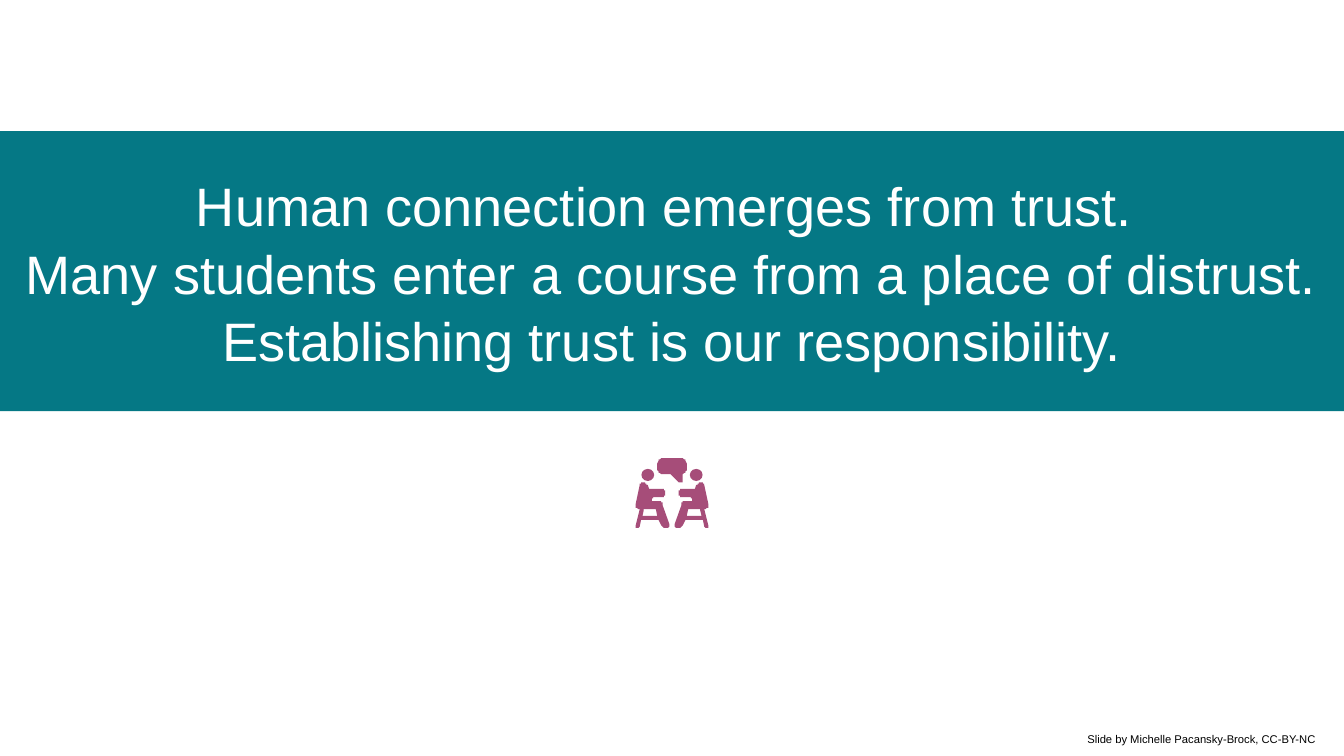
from pptx import Presentation
from pptx.dml.color import RGBColor
from pptx.enum.shapes import MSO_SHAPE
from pptx.enum.text import MSO_ANCHOR, MSO_AUTO_SIZE, PP_ALIGN
from pptx.util import Cm, Pt

OVAL = MSO_SHAPE.OVAL
CENTER, LEFT = PP_ALIGN.CENTER, PP_ALIGN.LEFT
MIDDLE, TOP = MSO_ANCHOR.MIDDLE, MSO_ANCHOR.TOP
NO_AUTOFIT = MSO_AUTO_SIZE.NONE
TITLE_ONLY = 5

COLORS = {"band": "057885", "icon": "A64D79", "on_band": "FFFFFF", "credit": "000000"}

MESSAGE = [
    "Human connection emerges from trust. ",
    "Many students enter a course from a place of distrust.",
    "Establishing trust is our responsibility.",
]

# Icon outlines: x runs from the icon's axis, y from its top, in icon units.
# Two numbers are a line's end; six are a curve's two controls and end.
ICON_UNIT = Cm(0.0254)
ICON_AXIS, ICON_TOP = Cm(12.7), Cm(8.66)
BUBBLE = [
    (-7, 0), (-9, 0, -11, 2, -11, 5), (-11, 8), (-11, 10, -9, 12, -7, 12), (-1, 12),
    (5, 18), (6, 18.5, 8, 18.5, 8, 17), (8, 12), (10, 11, 11, 10, 11, 7), (11, 5),
    (11, 2, 9, 0, 7, 0),
]
SEATED_BODY = [
    (21, 18), (23, 18, 24, 19, 24, 20), (27, 34), (28, 36, 26, 38, 24, 38), (27, 50),
    (28, 51, 27, 52, 26, 52), (25, 52, 25, 52, 24, 51), (23, 46), (10, 46), (8, 50),
    (8, 51, 6, 52, 5, 52), (2, 53, 1, 50, 2, 49), (7, 35), (7, 33, 8, 32, 10, 32),
    (13, 32), (14, 32, 15, 32, 15, 31), (15, 30, 14, 29, 13, 29), (8, 29),
    (6, 29, 5, 28, 5, 26), (5, 24, 6, 23, 8, 23), (17, 23), (18, 20),
    (19, 19, 20, 18, 21, 18),
]
CHAIR_GAP = [(12, 38), (11, 43), (22, 43), (21, 39), (21, 38)]
HEAD_CENTER, HEAD_TOP, HEAD_WIDTH, HEAD_HEIGHT = 18, 8, 9.5, 9


def flatten(outline, steps=6):
    """Turn lines and cubic curves into a list of points."""
    points = [outline[0]]
    for segment in outline[1:]:
        if len(segment) == 2:
            points.append(segment)
            continue
        controls = [points[-1], segment[:2], segment[2:4], segment[4:]]
        for step in range(1, steps + 1):
            t = step / steps
            weights = ((1 - t) ** 3, 3 * t * (1 - t) ** 2, 3 * t * t * (1 - t), t ** 3)
            points.append(tuple(
                sum(w * c[axis] for w, c in zip(weights, controls)) for axis in (0, 1)
            ))
    return points


class SlideBuilder:
    font = "Arial"
    inset = Cm(0.25)

    def __init__(self, slide):
        self.slide = slide

    def paint(self, shape, color):
        shape.fill.solid()
        shape.fill.fore_color.rgb = RGBColor.from_string(COLORS[color])
        shape.line.fill.background()

    def set_text(self, shape, lines, size, color, align, anchor, spacing=1.0):
        frame = shape.text_frame
        frame.text = "\n".join(lines)
        frame.word_wrap = True
        frame.auto_size = NO_AUTOFIT
        frame.vertical_anchor = anchor
        frame.margin_left = frame.margin_right = self.inset
        frame.margin_top = frame.margin_bottom = self.inset
        for paragraph in frame.paragraphs:
            paragraph.alignment = align
            paragraph.line_spacing = spacing
            paragraph.font.name = self.font
            paragraph.font.size = Pt(size)
            paragraph.font.color.rgb = RGBColor.from_string(COLORS[color])

    def title_band(self, lines, left, top, width, height):
        band = self.slide.shapes.title
        band.left, band.top, band.width, band.height = left, top, width, height
        self.paint(band, "band")
        self.set_text(band, lines, 29, "on_band", CENTER, MIDDLE, 1.04)

    def credit(self, line, left, top, width, height):
        box = self.slide.shapes.add_textbox(left, top, width, height)
        self.set_text(box, [line], 6, "credit", LEFT, TOP)

    def icon_outline(self, group, contours, side=1):
        """Draw closed contours as one shape; side -1 mirrors them."""
        pen = None
        for contour in contours:
            points = [(side * x, y) for x, y in flatten(contour)]
            if pen is None:
                pen = group.shapes.build_freeform(*points[0], scale=ICON_UNIT)
            else:
                pen.move_to(*points[0])
            pen.add_line_segments(points[1:], close=True)
        shape = pen.convert_to_shape(ICON_AXIS, ICON_TOP)
        shape.shadow.inherit = False
        self.paint(shape, "icon")

    def icon_head(self, group, side):
        left = ICON_AXIS + ICON_UNIT * (side * HEAD_CENTER - HEAD_WIDTH / 2)
        head = group.shapes.add_shape(
            OVAL, int(left), ICON_TOP + ICON_UNIT * HEAD_TOP,
            int(ICON_UNIT * HEAD_WIDTH), ICON_UNIT * HEAD_HEIGHT,
        )
        head.shadow.inherit = False
        self.paint(head, "icon")

    def conversation_icon(self):
        group = self.slide.shapes.add_group_shape()
        self.icon_outline(group, [BUBBLE])
        for side in (-1, 1):
            self.icon_head(group, side)
            self.icon_outline(group, [SEATED_BODY, CHAIR_GAP], side)


def main():
    deck = Presentation()
    deck.slide_width, deck.slide_height = Cm(25.4), Cm(14.29)
    builder = SlideBuilder(deck.slides.add_slide(deck.slide_layouts[TITLE_ONLY]))
    builder.credit(
        "Slide by Michelle Pacansky-Brock, CC-BY-NC",
        Cm(20.3), Cm(13.66), Cm(7.1), Cm(0.38),
    )
    builder.title_band(MESSAGE, Cm(0), Cm(2.48), deck.slide_width, Cm(5.29))
    builder.conversation_icon()
    deck.save("out.pptx")


if __name__ == "__main__":
    main()
